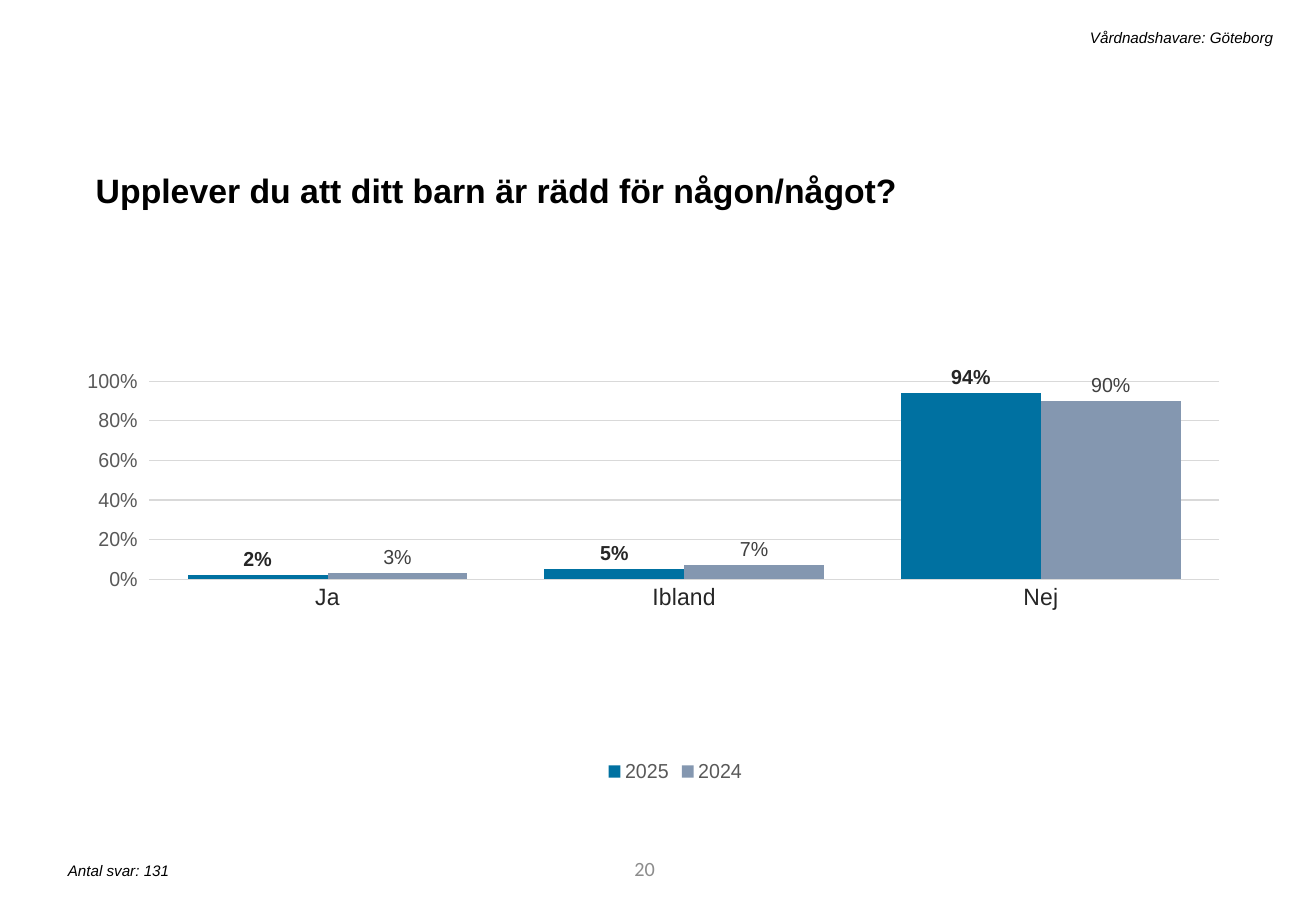
from dataclasses import dataclass

from lxml import etree
from pptx import Presentation
from pptx.chart.chart import Chart
from pptx.chart.data import CategoryChartData
from pptx.dml.color import RGBColor
from pptx.enum.chart import XL_CHART_TYPE, XL_LABEL_POSITION, XL_LEGEND_POSITION, XL_TICK_MARK
from pptx.enum.text import MSO_ANCHOR, PP_ALIGN
from pptx.oxml.ns import qn
from pptx.slide import Slide
from pptx.text.text import Font
from pptx.util import Pt

COLUMNS = XL_CHART_TYPE.COLUMN_CLUSTERED
OUTSIDE_END = XL_LABEL_POSITION.OUTSIDE_END
LEGEND_BOTTOM = XL_LEGEND_POSITION.BOTTOM
TICK_NONE, TICK_OUTSIDE = XL_TICK_MARK.NONE, XL_TICK_MARK.OUTSIDE
TOP, MIDDLE = MSO_ANCHOR.TOP, MSO_ANCHOR.MIDDLE
LEFT, RIGHT = PP_ALIGN.LEFT, PP_ALIGN.RIGHT

BLACK = RGBColor(0x00, 0x00, 0x00)
PAGE_GREY = RGBColor(0x8C, 0x8C, 0x8C)
DARK_GREY = RGBColor(0x26, 0x26, 0x26)
LABEL_GREY = RGBColor(0x40, 0x40, 0x40)
AXIS_GREY = RGBColor(0x59, 0x59, 0x59)
LINE_GREY = RGBColor(0xD9, 0xD9, 0xD9)
BLUE = RGBColor(0x00, 0x71, 0xA1)
SLATE = RGBColor(0x84, 0x97, 0xB0)

PERCENT = "0%"
CATEGORIES = ("Ja", "Ibland", "Nej")
PLOT_LAYOUT = {"x": 0.025, "y": 0.154, "w": 0.966, "h": 0.413}


@dataclass(frozen=True)
class Caption:
    text: str
    left: float
    top: float
    width: float
    height: float
    size: float
    color: RGBColor = BLACK
    font_name: str = "Arial"
    bold: bool = False
    italic: bool = False
    alignment: PP_ALIGN = LEFT
    anchor: MSO_ANCHOR = TOP
    line_spacing: float = 1.0
    space_before: float = 0


@dataclass(frozen=True)
class YearSeries:
    name: str
    values: tuple[float, ...]
    color: RGBColor
    label_color: RGBColor
    label_bold: bool


CAPTIONS = (
    Caption("20", 219.6, 500.4, 175.7, 28.8, 12, color=PAGE_GREY, font_name="Calibri",
            alignment=RIGHT, anchor=MIDDLE),
    Caption("Upplever du att ditt barn är rädd för någon/något?", 49.7, 92.2, 676.8, 33.8, 20,
            bold=True, line_spacing=1.2, space_before=10),
    Caption("Antal svar: 131", 33.1, 506.9, 317.5, 18, 9, italic=True),
    Caption("Vårdnadshavare: Göteborg", 123.8, 13, 637.9, 18, 9, italic=True, alignment=RIGHT),
)

YEARS = (
    YearSeries("2025", (0.02, 0.05, 0.94), BLUE, DARK_GREY, True),
    YearSeries("2024", (0.03, 0.07, 0.9), SLATE, LABEL_GREY, False),
)


def style_font(font: Font, size: float, color: RGBColor, name: str = "Arial",
               bold: bool = False, italic: bool = False) -> None:
    font.name = name
    font.size = Pt(size)
    font.bold = bold
    font.italic = italic
    font.color.rgb = color


def add_caption(slide: Slide, caption: Caption) -> None:
    box = slide.shapes.add_textbox(Pt(caption.left), Pt(caption.top),
                                   Pt(caption.width), Pt(caption.height))
    frame = box.text_frame
    frame.word_wrap = True
    frame.vertical_anchor = caption.anchor
    paragraph = frame.paragraphs[0]
    paragraph.text = caption.text
    paragraph.alignment = caption.alignment
    paragraph.line_spacing = caption.line_spacing
    paragraph.space_before = Pt(caption.space_before)
    style_font(paragraph.font, caption.size, caption.color, caption.font_name,
               caption.bold, caption.italic)


def place_plot(chart: Chart) -> None:
    """Fix the inner plot area as fractions of the chart."""
    plot_area = chart.plots[0]._element.getparent()
    for automatic in plot_area.findall(qn("c:layout")):
        plot_area.remove(automatic)
    layout = etree.Element(qn("c:layout"))
    manual = etree.SubElement(layout, qn("c:manualLayout"))
    settings = {"layoutTarget": "inner", "xMode": "edge", "yMode": "edge", **PLOT_LAYOUT}
    for tag, value in settings.items():
        etree.SubElement(manual, qn(f"c:{tag}")).set("val", str(value))
    plot_area.insert(0, layout)


def style_axes(chart: Chart) -> None:
    category_axis, value_axis = chart.category_axis, chart.value_axis
    category_axis.major_tick_mark = TICK_NONE
    style_font(category_axis.tick_labels.font, 14, DARK_GREY)

    value_axis.minimum_scale = 0
    value_axis.maximum_scale = 1
    value_axis.major_unit = 0.2
    value_axis.major_tick_mark = TICK_OUTSIDE
    value_axis.format.line.fill.background()
    value_axis.tick_labels.number_format = PERCENT
    value_axis.tick_labels.number_format_is_linked = False
    style_font(value_axis.tick_labels.font, 12, AXIS_GREY)

    for line in (category_axis.format.line, value_axis.major_gridlines.format.line):
        line.color.rgb = LINE_GREY
        line.width = Pt(0.75)


def add_answer_chart(slide: Slide) -> None:
    data = CategoryChartData(number_format=PERCENT)
    data.categories = CATEGORIES
    for year in YEARS:
        data.add_series(year.name, year.values)
    chart = slide.shapes.add_chart(COLUMNS, Pt(51.8), Pt(182.2), Pt(676.8), Pt(284.4), data).chart
    chart.has_title = False
    style_font(chart.font, 10, BLACK)

    # Legend
    chart.has_legend = True
    chart.legend.position = LEGEND_BOTTOM
    chart.legend.include_in_layout = False
    style_font(chart.legend.font, 12, AXIS_GREY)

    # Columns and their labels
    plot = chart.plots[0]
    plot.gap_width = 55
    plot.overlap = 0
    plot.vary_by_categories = False
    for series, year in zip(plot.series, YEARS):
        series.format.fill.solid()
        series.format.fill.fore_color.rgb = year.color
        labels = series.data_labels
        labels.show_value = True
        labels.position = OUTSIDE_END
        labels.number_format = PERCENT
        labels.number_format_is_linked = False
        style_font(labels.font, 12, year.label_color, bold=year.label_bold)

    style_axes(chart)
    place_plot(chart)


def main() -> None:
    presentation = Presentation()
    presentation.slide_width = Pt(780)
    presentation.slide_height = Pt(540)
    slide = presentation.slides.add_slide(presentation.slide_layouts[6])

    for caption in CAPTIONS:
        add_caption(slide, caption)
    add_answer_chart(slide)

    presentation.save("out.pptx")


if __name__ == "__main__":
    main()
